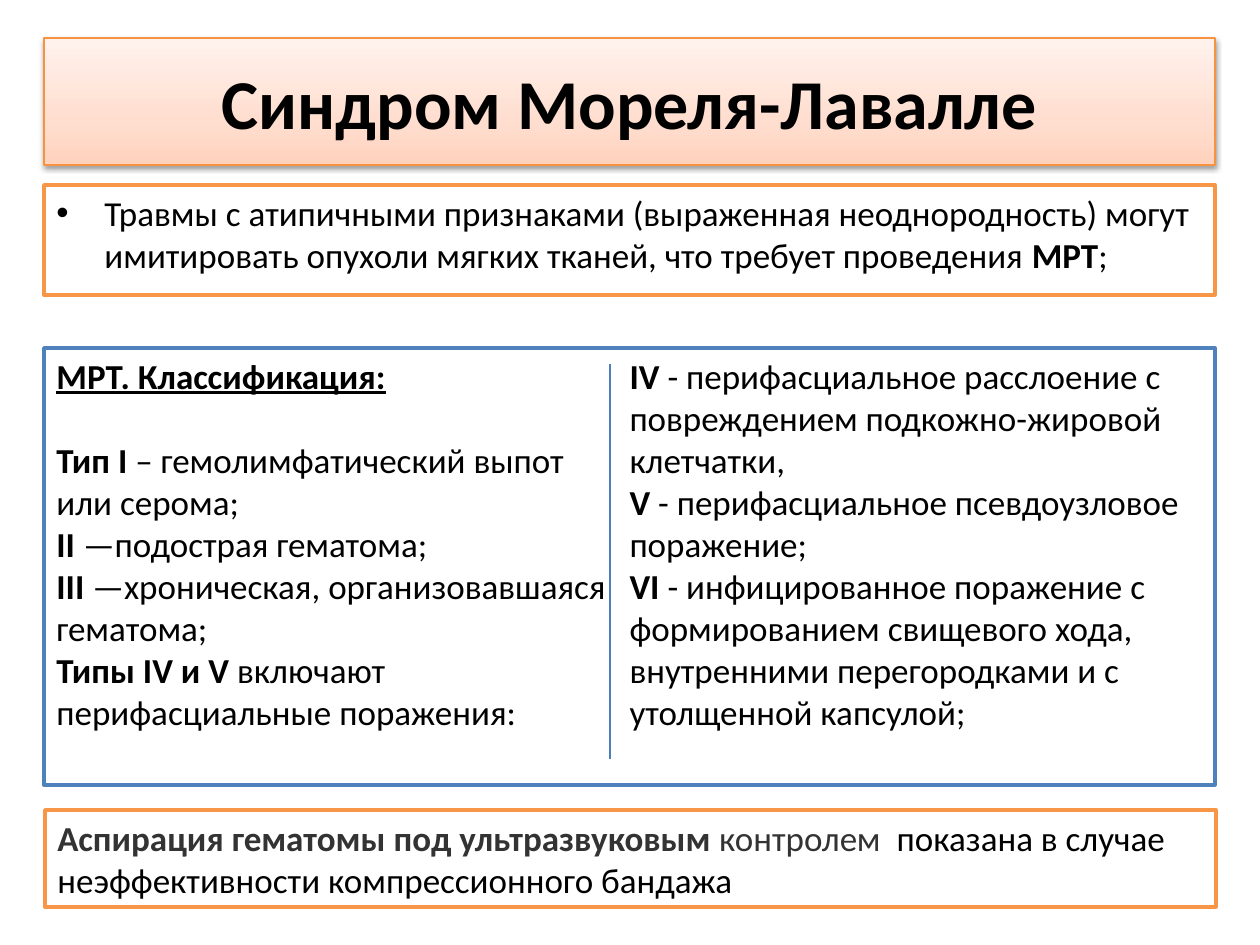
from copy import deepcopy
from dataclasses import dataclass

from lxml.etree import SubElement
from pptx import Presentation
from pptx.dml.color import RGBColor as Rgb
from pptx.enum.shapes import MSO_CONNECTOR as Connector, MSO_SHAPE as Shape
from pptx.enum.text import MSO_ANCHOR as Anchor, MSO_AUTO_SIZE as AutoSize, PP_ALIGN as Align
from pptx.oxml.ns import qn
from pptx.util import Emu, Pt


@dataclass(frozen=True)
class Theme:
    font: str = "Calibri"
    title_size: int = 40
    body_size: int = 20
    line_height: int = 24
    text: str = "000000"
    muted: str = "333333"
    paper: str = "FFFFFF"
    orange: str = "F79646"
    blue: str = "4F81BD"
    divider: str = "4B7EBC"
    title_line: str = "F69240"
    title_stops: tuple = ((0, "FFD2BD"), (0.35, "FFDED0"), (1, "FFF2ED"))
    frame_width: float = 2
    thin_width: float = 0.75


THEME = Theme()
EMU_PER_PX = 914400 // 126
LEFT, WIDTH = 44, 1171

# Each paragraph is a list of (text, style) parts: b bold, u underlined, m muted
IMAGING_NOTE = [
    ("Травмы с атипичными признаками (выраженная неоднородность) могут "
     "имитировать опухоли мягких тканей, что требует проведения ", ""),
    ("МРТ", "b"), (";", "")]
CLASSIFICATION = [
    [("МРТ. Классификация:", "bu")],
    [("Тип I ", "b"), ("– гемолимфатический выпот \nили серома;", "")],
    [("II ", "b"), ("—подострая гематома;", "")],
    [("III", "b"), (" —хроническая, организовавшаяся гематома;", "")],
    [("Типы IV и V ", "b"), ("включают перифасциальные поражения:", "")],
    [("IV ", "b"), ("- перифасциальное расслоение с повреждением "
                    "подкожно-жировой клетчатки,", "")],
    [("V", "b"), (" - перифасциальное псевдоузловое поражение;", "")],
    [("VI ", "b"), ("- инфицированное поражение с формированием свищевого хода, "
                    "внутренними перегородками и с утолщенной капсулой;", "")]]
HEADING, COLUMN_END = 0, 4
ASPIRATION = [
    ("Аспирация гематомы под ультразвуковым", "bm"), (" контролем ", "m"),
    (" показана в случае неэффективности компрессионного бандажа", "")]


def px(*lengths):
    return [Emu(length * EMU_PER_PX) for length in lengths]


def style_run(run, size, style=""):
    font = run.font
    font.name, font.size = THEME.font, Pt(size)
    font.bold, font.underline = "b" in style, "u" in style
    font.color.rgb = Rgb.from_string(THEME.muted if "m" in style else THEME.text)


def style_line(line, color, width):
    line.color.rgb = Rgb.from_string(color)
    line.width = Pt(width)


def write_parts(paragraph, parts):
    paragraph.alignment = Align.LEFT
    for text, style in parts:
        for index, piece in enumerate(text.split("\n")):
            if index:
                paragraph.add_line_break()
            run = paragraph.add_run()
            run.text = piece
            style_run(run, THEME.body_size, style)


def add_framed_text(slide, box, color, paragraphs):
    frame = slide.shapes.add_shape(Shape.RECTANGLE, *px(*box))
    frame.shadow.inherit = False
    frame.fill.solid()
    frame.fill.fore_color.rgb = Rgb.from_string(THEME.paper)
    style_line(frame.line, color, THEME.frame_width)
    body = frame.text_frame
    body.word_wrap, body.auto_size = True, AutoSize.NONE
    body.vertical_anchor = Anchor.TOP
    for index, parts in enumerate(paragraphs):
        write_parts(body.add_paragraph() if index else body.paragraphs[0], parts)
    return body


def add_bullet(paragraph, indent):
    properties = paragraph._p.get_or_add_pPr()
    properties.set("marL", str(indent))
    properties.set("indent", str(-indent))
    SubElement(properties, qn("a:buFont"), typeface="Arial")
    SubElement(properties, qn("a:buChar"), char="•")


def add_title_shadow(title):
    effects = SubElement(title._element.spPr, qn("a:effectLst"))
    shadow = SubElement(effects, qn("a:outerShdw"), blurRad="40000", dist="20000",
                        dir="5400000", rotWithShape="0")
    color = SubElement(shadow, qn("a:srgbClr"), val="000000")
    SubElement(color, qn("a:alpha"), val="38000")


def format_title(title, box, text):
    title.left, title.top, title.width, title.height = px(*box)
    title.fill.gradient()
    title.fill.gradient_angle = 90
    stop_list = title._element.spPr.find(".//" + qn("a:gsLst"))
    stop_list.append(deepcopy(stop_list[0]))
    for stop, (position, color) in zip(title.fill.gradient_stops, THEME.title_stops):
        stop.position = position
        stop.color.rgb = Rgb.from_string(color)
    style_line(title.line, THEME.title_line, THEME.thin_width)
    add_title_shadow(title)
    title.text_frame.text = text
    title.text_frame.vertical_anchor = Anchor.MIDDLE
    heading = title.text_frame.paragraphs[0]
    heading.alignment = Align.CENTER
    style_run(heading.runs[0], THEME.title_size, "b")


def add_divider(slide, x, top, bottom):
    divider = slide.shapes.add_connector(Connector.STRAIGHT, *px(x, top, x, bottom))
    style_line(divider.line, THEME.divider, THEME.thin_width)
    SubElement(divider._element.spPr, qn("a:effectLst"))


def main():
    deck = Presentation()
    deck.slide_width, deck.slide_height = px(1260, 945)
    slide = deck.slides.add_slide(deck.slide_layouts[5])

    # Title band
    format_title(slide.shapes.title, (LEFT, 38, WIDTH, 127), "Синдром Мореля-Лавалле")

    # Reason for imaging
    note = add_framed_text(slide, (LEFT, 185, WIDTH, 110), THEME.orange, [IMAGING_NOTE])
    add_bullet(note.paragraphs[0], px(48)[0])

    # Treatment
    add_framed_text(slide, (LEFT + 1, 810, WIDTH, 97), THEME.orange, [ASPIRATION])

    # Classification in two columns; the gaps open a line and close the first column
    types = add_framed_text(slide, (LEFT, 348, WIDTH, 437), THEME.blue, CLASSIFICATION)
    types._txBody.bodyPr.set("numCol", "2")
    for index in (HEADING, COLUMN_END):
        types.paragraphs[index].space_after = Pt(THEME.line_height)
    add_divider(slide, 610, 364, 759)

    deck.save("out.pptx")


if __name__ == "__main__":
    main()
